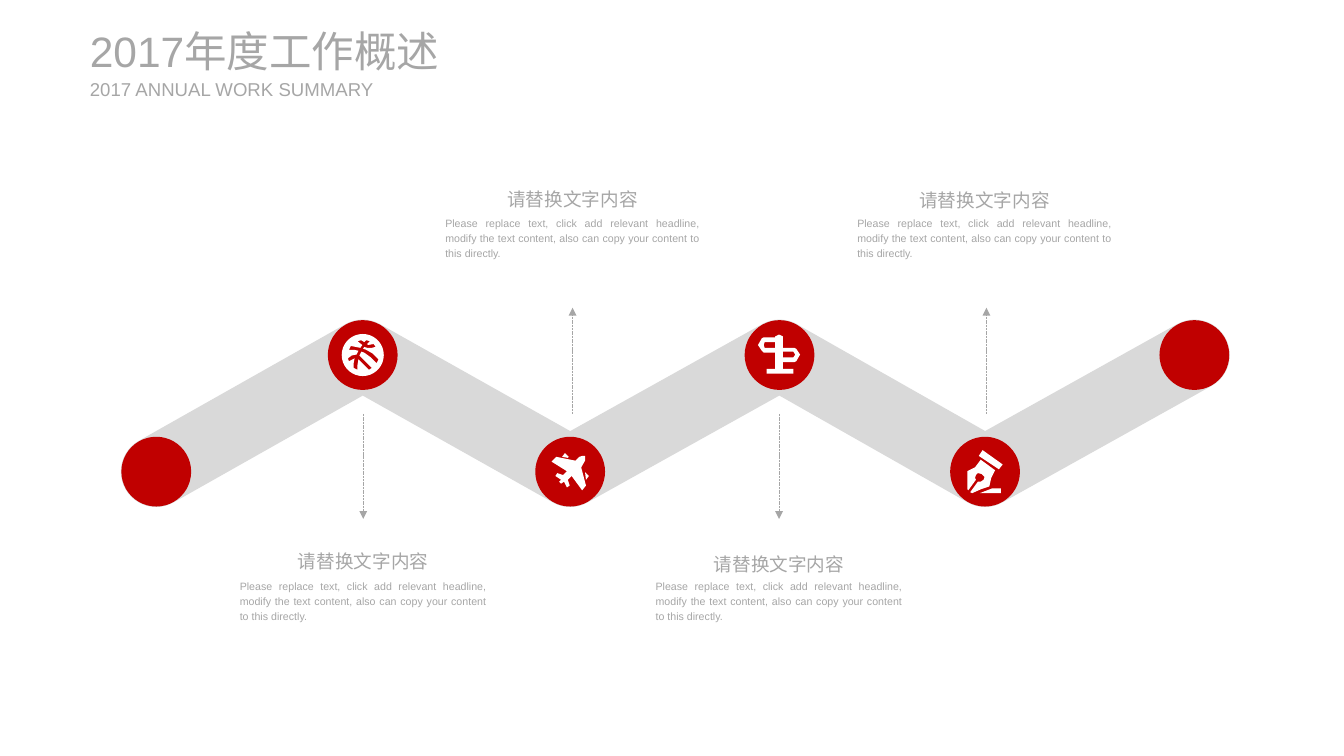
from math import atan2, cos, degrees, hypot, pi, radians, sin

from lxml.etree import SubElement
from pptx import Presentation
from pptx.dml.color import RGBColor
from pptx.enum.dml import MSO_LINE
from pptx.enum.shapes import MSO_CONNECTOR, MSO_SHAPE as SHAPE
from pptx.enum.text import MSO_ANCHOR as ANCHOR, MSO_AUTO_SIZE as FIT, PP_ALIGN as ALIGN
from pptx.oxml.ns import qn
from pptx.util import Pt

EMU_PER_PX = 9144  # 100 px to the inch
COLORS = {"red": "C00000", "band": "D9D9D9", "text": "A6A6A6", "icon": "FFFFFF"}
FONT = "Arial"
HEADLINE = "请替换文字内容"
BODY = ("Please replace text, click add relevant headline, modify the text content, "
        "also can copy your content to this directly.")

# Milestones along the zigzag
DISC = 73
BAND_RADIUS = 37
DISC_LEFTS = [127, 343, 560, 779, 994, 1213]
DISC_TOPS = [457, 335]  # low and high, in turn

# Labels: centre, arrow x, headline top, body top, body width, arrow tip y
LABELS = [
    (380, 380, 566, 599, 278, 543),
    (815, 815, 569, 599, 278, 543),
    (1030, 1032, 188, 219, 286, 322),
    (599, 599, 187, 219, 286, 322),
]
ARROW_START = 433
HEADLINE_WIDTH = 158

# Icon outlines
BALL_SEAMS = [
    (367, 362), (365, 366), (370, 366), (375, 367), (374, 369), (373, 371), (368, 372),
    (364, 375), (365, 378), (371, 375), (370, 380), (370, 385), (374, 387), (374, 382),
    (375, 376), (380, 381), (386, 387), (389, 385), (383, 379), (376, 372), (378, 368),
    (381, 369), (388, 374), (394, 380), (396, 376), (390, 370), (383, 366), (380, 365),
    (381, 363), (384, 364), (389, 364), (393, 363), (391, 360), (385, 361), (384, 360),
    (387, 357), (383, 356), (381, 358), (378, 356), (374, 357), (379, 361), (377, 364),
]
SIGNPOST = [
    [(819, 364), (831, 364), (833, 365), (837, 371), (833, 378), (831, 379), (819, 379),
     (819, 386), (830, 386), (830, 391), (802, 391), (802, 386), (811, 386), (811, 369),
     (799, 369), (797, 367), (793, 361), (797, 354), (799, 353), (811, 353), (811, 352),
     (815, 350), (819, 352)],
    [(811, 358), (800, 358), (799, 361), (800, 364), (811, 364)],
    [(830, 368), (819, 368), (819, 374), (830, 374), (832, 371)],
]
PLANE = [
    [(612, 477), (612, 482), (608, 489), (613, 508), (609, 513), (598, 498), (594, 502),
     (596, 508), (593, 510), (590, 504), (587, 506), (585, 504), (587, 502), (581, 498),
     (583, 495), (589, 497), (593, 493), (577, 483), (582, 478), (602, 482), (606, 478),
     (609, 477)],
    [(616, 498), (612, 494), (613, 502)],
    [(591, 474), (588, 478), (594, 479), (595, 478)],
]
PEN = [
    [(1013, 513), (1012, 512), (1012, 493), (1020, 489), (1026, 481), (1041, 492),
     (1037, 500), (1035, 509), (1026, 512), (1017, 516), (1015, 515), (1023, 504),
     (1026, 504), (1029, 502), (1030, 499), (1027, 496), (1023, 495), (1021, 497),
     (1020, 500), (1021, 502)],
    [(1025, 516), (1047, 516), (1047, 511), (1038, 511)],
    [(1045, 491), (1049, 486), (1028, 471), (1024, 477)],
]


def px(length):
    return round(length * EMU_PER_PX)


def color(name):
    return RGBColor.from_string(COLORS[name])


def arc(center, radius, start, sweep, steps=36):
    """Points on an arc; angles in degrees, clockwise on the page."""
    angles = [radians(start + sweep * step / steps) for step in range(steps + 1)]
    return [(center[0] + radius * cos(a), center[1] + radius * sin(a)) for a in angles]


def band_outline(centers, radius):
    """Edge of a round-ended band: out along one side, back along the other."""
    route = centers + centers[-2:0:-1]
    count = len(route)
    headings = []
    for index, (x, y) in enumerate(route):
        next_x, next_y = route[(index + 1) % count]
        headings.append(degrees(atan2(next_y - y, next_x - x)))
    outline = []
    for index, center in enumerate(route):
        heading = headings[index - 1]
        turn = (headings[index] - heading) % 360
        if turn < 270:  # outer bend or end cap
            outline += arc(center, radius, heading - 90, turn)
        else:  # inner bend
            half = (turn - 360) / 2
            reach = radius / cos(radians(half))
            outline += arc(center, reach, heading - 90 + half, 0, 1)[:1]
    return outline


def paint(shape, fill):
    shape.shadow.inherit = False
    shape.fill.solid()
    shape.fill.fore_color.rgb = color(fill)
    shape.line.fill.background()


def add_outline(page, contours, fill):
    builder = None
    for contour in contours:
        points = [(px(x), px(y)) for x, y in contour]
        if builder is None:
            builder = page.shapes.build_freeform(*points[0], scale=1.0)
        else:
            builder.move_to(*points[0])
        builder.add_line_segments(points[1:], close=True)
    paint(builder.convert_to_shape(), fill)


def add_disc(page, left, top):
    paint(page.shapes.add_shape(SHAPE.OVAL, px(left), px(top), px(DISC), px(DISC)), "red")


def add_arrow(page, x, start, end):
    arrow = page.shapes.add_connector(MSO_CONNECTOR.STRAIGHT, px(x), px(start), px(x), px(end))
    arrow.line.color.rgb = color("text")
    for name, value in {"width": Pt(0.5), "dash_style": MSO_LINE.SQUARE_DOT}.items():
        setattr(arrow.line, name, value)
    SubElement(arrow.line._get_or_add_ln(), qn("a:tailEnd"), type="triangle")
    SubElement(arrow._element.spPr, qn("a:effectLst"))


def add_text(page, text, place, size, para_format, frame_format):
    box = page.shapes.add_textbox(*map(px, place))
    para = box.text_frame.paragraphs[0]
    span = para.add_run()
    span.text = text
    formats = [
        (box.text_frame, {"auto_size": FIT.SHAPE_TO_FIT_TEXT, **frame_format}),
        (para, para_format),
        (span.font, {"name": FONT, "size": Pt(size)}),
    ]
    for target, values in formats:
        for name, value in values.items():
            setattr(target, name, value)
    span.font.color.rgb = color("text")


def add_label(page, center, headline_top, body_top, body_width):
    add_text(page, HEADLINE, (center - HEADLINE_WIDTH / 2, headline_top, HEADLINE_WIDTH, 36), 14,
             {"alignment": ALIGN.CENTER, "line_spacing": 1.2}, {"word_wrap": False})
    add_text(page, BODY, (center - body_width / 2, body_top, body_width, 57), 8,
             {"alignment": ALIGN.JUSTIFY, "line_spacing": 1.2}, {"word_wrap": True})


def main():
    deck = Presentation()
    deck.slide_width, deck.slide_height = px(1406), px(791)
    page = deck.slides.add_slide(deck.slide_layouts[6])

    # Zigzag band with its discs
    corners = [(left, DISC_TOPS[index % 2]) for index, left in enumerate(DISC_LEFTS)]
    centers = [(left + DISC / 2, top + DISC / 2) for left, top in corners]
    add_outline(page, [band_outline(centers, BAND_RADIUS)], "band")
    for left, top in corners:
        add_disc(page, left, top)

    # Icons
    ball = [arc(centers[1], 22, 0, 360), BALL_SEAMS]
    for icon in (ball, SIGNPOST, PLANE, PEN):
        add_outline(page, icon, "icon")

    # Arrows and labels
    for center, arrow_x, headline_top, body_top, body_width, tip in LABELS:
        add_arrow(page, arrow_x, ARROW_START, tip)
        add_label(page, center, headline_top, body_top, body_width)

    # Title and subtitle
    margins = dict.fromkeys(["margin_left", "margin_top", "margin_right", "margin_bottom"], 0)
    title_frame = {"word_wrap": True, "vertical_anchor": ANCHOR.MIDDLE, **margins}
    add_text(page, "2017年度工作概述", (94, 26, 432, 54), 32, {}, title_frame)
    add_text(page, "2017 ANNUAL WORK SUMMARY", (94, 81, 307, 24), 14, {}, title_frame)

    deck.save("out.pptx")


if __name__ == "__main__":
    main()
